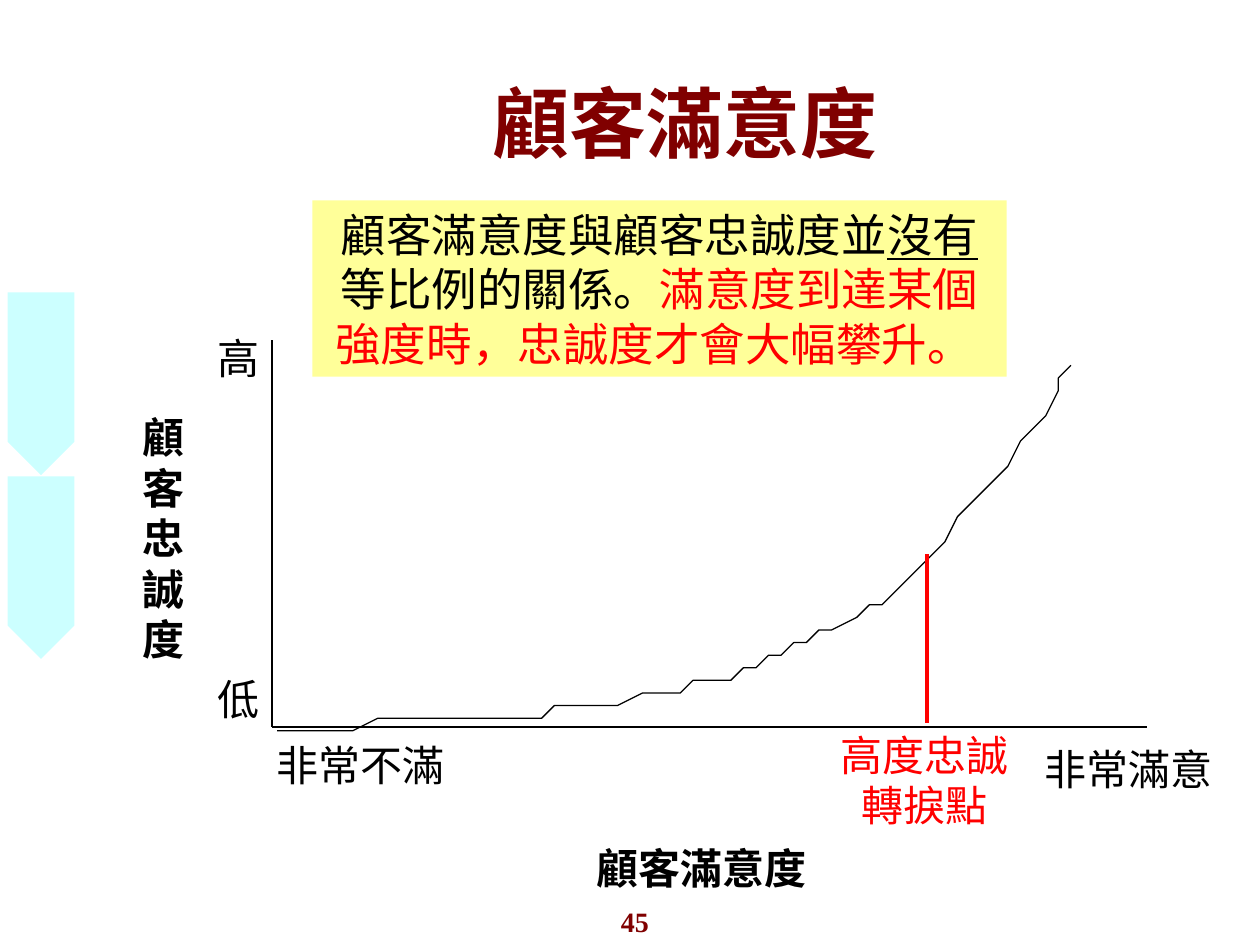
from lxml import etree
from pptx import Presentation
from pptx import util as u
from pptx.dml.color import RGBColor
from pptx.enum import shapes, text
from pptx.oxml.ns import qn

BLACK = RGBColor(0, 0, 0)
RED = RGBColor(255, 0, 0)
MAROON = RGBColor(128, 0, 0)
YELLOW = RGBColor(255, 255, 153)
CYAN = RGBColor(204, 255, 255)
COLS = 100
SERIF = "Times New Roman"


def bezier(a, b, c, d, steps=16):
    """Points on a cubic curve after its start a."""
    for i in range(1, steps + 1):
        t = i / steps
        s = 1 - t
        yield tuple(s**3 * p + 3 * s * s * t * q + 3 * s * t * t * r + t**3 * e
                    for p, q, r, e in zip(a, b, c, d))


class Board:
    """Draws on one slide; lengths are cells of a square grid."""

    def __init__(self, deck):
        self.slide = deck.slides.add_slide(deck.slide_layouts[6])
        self.items = self.slide.shapes
        self.cell = deck.slide_width / COLS

    def emu(self, *cells):
        return [u.Emu(round(n * self.cell)) for n in cells]

    def fill_text(self, shape, paras, size=24, color=BLACK, bold=False,
                  font=SERIF, align=text.PP_ALIGN.CENTER, wrap=False,
                  middle=False):
        """Each paragraph is a list of (words, colour or None, underline)."""
        frame = shape.text_frame
        frame.word_wrap = wrap
        frame.vertical_anchor = (text.MSO_ANCHOR.MIDDLE if middle
                                 else text.MSO_ANCHOR.TOP)
        for i, parts in enumerate(paras):
            para = frame.add_paragraph() if i else frame.paragraphs[0]
            para.alignment = align
            for words, tint, under in parts:
                run = para.add_run()
                run.text = words
                run.font.name = font
                run.font.size = u.Pt(size)
                run.font.bold = bold
                run.font.underline = under
                run.font.color.rgb = tint or color

    def label(self, words, x, y, w, h, **style):
        box = self.items.add_textbox(*self.emu(x, y, w, h))
        self.fill_text(box, [[(line, None, False)]
                             for line in words.split("\n")], **style)

    def block(self, kind, fill, x, y, w, h, turn=0):
        shape = self.items.add_shape(kind, *self.emu(x, y, w, h))
        shape.shadow.inherit = False
        shape.fill.solid()
        shape.fill.fore_color.rgb = fill
        shape.line.fill.background()
        shape.rotation = turn
        return shape

    def line(self, x1, y1, x2, y2, color=BLACK, width=0.75):
        link = self.items.add_connector(shapes.MSO_CONNECTOR.STRAIGHT,
                                        *self.emu(x1, y1, x2, y2))
        link.line.color.rgb = color
        link.line.width = u.Pt(width)
        etree.SubElement(link._element.spPr, qn("a:effectLst"))

    def curve(self, start, *parts):
        """Draws joined cubic parts, each two handles and an end."""
        points, last = [], start
        for part in parts:
            points += bezier(last, *part)
            last = part[-1]
        pen = self.items.build_freeform(*start, scale=self.cell)
        pen.add_line_segments(points, close=False)
        shape = pen.convert_to_shape()
        shape.shadow.inherit = False
        shape.fill.background()
        shape.line.color.rgb = BLACK
        shape.line.width = u.Pt(0.75)


def main():
    deck = Presentation()
    deck.slide_width, deck.slide_height = u.Inches(10), u.Inches(7.5)
    board = Board(deck)

    board.label("45", 48.3, 71.3, 8.3, 3.7, size=16, color=MAROON, bold=True,
                align=text.PP_ALIGN.LEFT, wrap=True)
    board.label("顧客滿意度", 17.8, 3.4, 73.2, 12.5, size=44, color=MAROON,
                bold=True, font="Calibri", wrap=True, middle=True)

    left, base = 21.6, 57.7
    board.label("顧客滿意度", 46.3, 66.4, 18.7, 5, bold=True)
    board.label("顧客忠誠度", 9.8, 32.2, 6.3, 21, bold=True, wrap=True)
    board.line(left, 27, left, base)
    board.line(left, base, 91, base)
    for words, x, y, w in (("低", 16.3, 53, 5.3), ("高", 16.3, 25.9, 5.3),
                           ("非常不滿", 21, 58.2, 15.3),
                           ("非常滿意", 81.9, 58.5, 15.3)):
        board.label(words, x, y, w, 5)

    board.curve((left, base),
                ((32.2, 57.4), (42.8, 57), (50.8, 55.3)),
                ((58.8, 53.6), (63.9, 51.9), (69.7, 47.5)),
                ((75.5, 43), (80.5, 35.8), (85.4, 28.6)))
    board.line(73.6, 44, 73.6, 57.4, RED, 2.25)
    board.label("高度忠誠\n轉捩點", 65.7, 57.4, 15.3, 9, color=RED)

    note = board.block(shapes.MSO_SHAPE.RECTANGLE, YELLOW, 24.8, 15.9, 55.1, 14)
    board.fill_text(note, [[("顧客滿意度與顧客忠誠度並", None, False),
                            ("沒有", None, True),
                            ("等比例的關係。", None, False),
                            ("滿意度到達某個強度時，忠誠度才會大幅攀升。 ",
                             RED, False)]],
                    size=26, wrap=True, middle=True)

    for y in (27.8, 42.4):
        board.block(shapes.MSO_SHAPE.PENTAGON, CYAN, -4, y, 14.5, 5.3, turn=90)

    deck.save("out.pptx")


if __name__ == "__main__":
    main()
